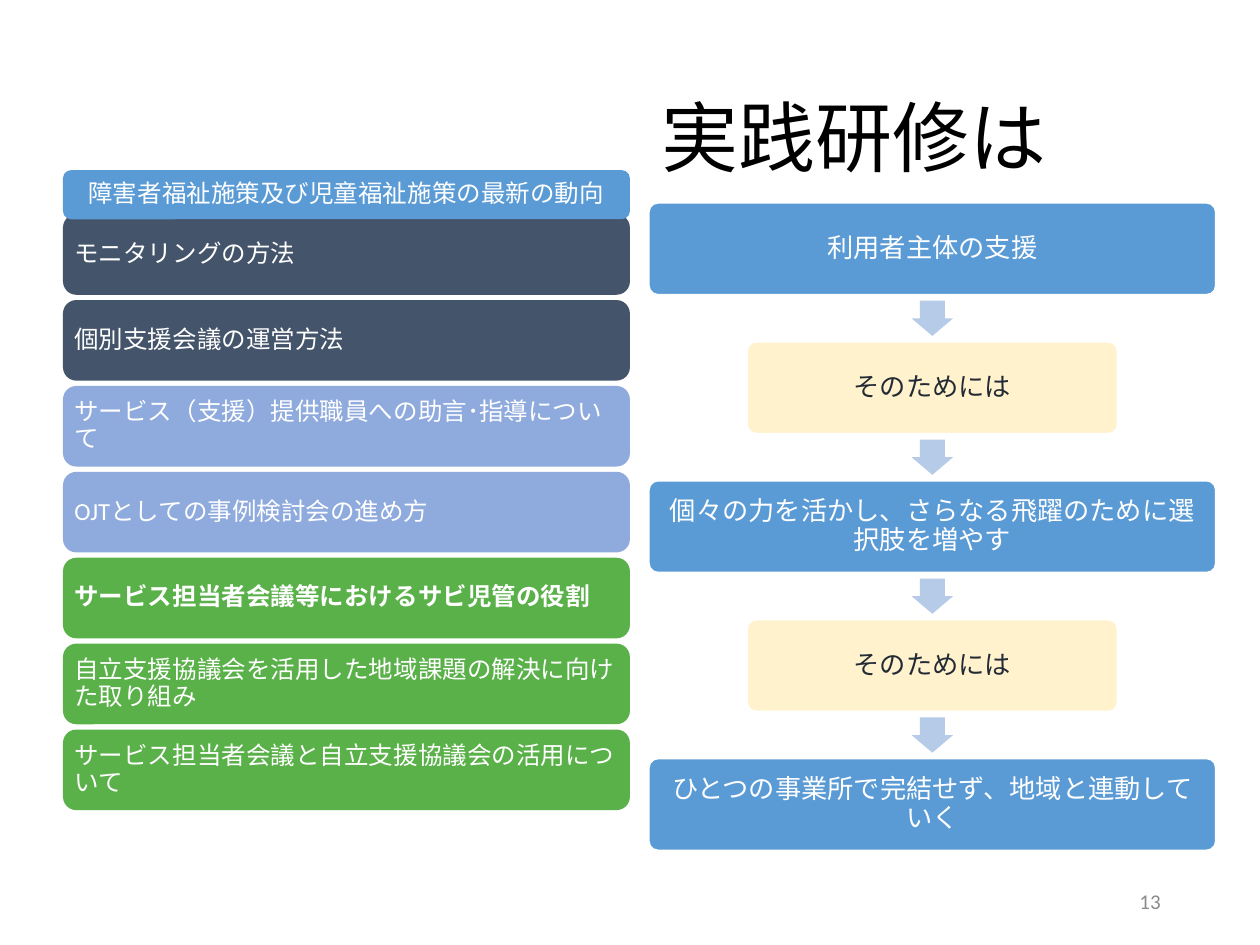
from pptx import Presentation
from pptx.dml.color import RGBColor
from pptx.enum.shapes import MSO_SHAPE
from pptx.enum.text import MSO_ANCHOR, PP_ALIGN
from pptx.util import Inches, Pt

ROUND = MSO_SHAPE.ROUNDED_RECTANGLE
DOWN = MSO_SHAPE.DOWN_ARROW
MIDDLE = MSO_ANCHOR.MIDDLE
LEFT, CENTER, RIGHT = PP_ALIGN.LEFT, PP_ALIGN.CENTER, PP_ALIGN.RIGHT

FONT = "Calibri"
WHITE, BLUE, NAVY = "FFFFFF", "5B9BD5", "44546A"
PERIWINKLE, GREEN = "8FAADC", "5AB149"
CREAM, INK, PALE_BLUE = "FFF2CC", "222A35", "B5CBE7"

TOPICS = [
    ("モニタリングの方法", NAVY, False),
    ("個別支援会議の運営方法", NAVY, False),
    ("サービス（支援）提供職員への助言･指導について", PERIWINKLE, False),
    ("OJTとしての事例検討会の進め方", PERIWINKLE, False),
    ("サービス担当者会議等におけるサビ児管の役割", GREEN, True),
    ("自立支援協議会を活用した地域課題の解決に向けた取り組み", GREEN, False),
    ("サービス担当者会議と自立支援協議会の活用について", GREEN, False),
]
GOAL = (4.5, BLUE, WHITE)
BRIDGE = (2.94, CREAM, INK)
STEPS = [
    ("利用者主体の支援", GOAL),
    ("そのためには", BRIDGE),
    ("個々の力を活かし、さらなる飛躍のために選択肢を増やす", GOAL),
    ("そのためには", BRIDGE),
    ("ひとつの事業所で完結せず、地域と連動していく", GOAL),
]


def rgb(value):
    return RGBColor.from_string(value)


def write(sp, text, size, color, align=LEFT, spacing=0.9, bold=False):
    tf = sp.text_frame
    tf.word_wrap = True
    tf.vertical_anchor = MIDDLE
    p = tf.paragraphs[0]
    p.alignment = align
    p.line_spacing = spacing
    r = p.add_run()
    r.text = text
    r.font.size = Pt(size)
    r.font.name = FONT
    r.font.bold = bold
    r.font.color.rgb = rgb(color)


def add_label(s, box, text, size, color, **style):
    sp = s.shapes.add_textbox(*map(Inches, box))
    write(sp, text, size, color, **style)


def add_block(s, kind, box, fill, line=None, adjust=()):
    sp = s.shapes.add_shape(kind, *map(Inches, box))
    sp.shadow.inherit = False
    sp.fill.solid()
    sp.fill.fore_color.rgb = rgb(fill)
    if line:
        sp.line.color.rgb = rgb(line)
        sp.line.width = Pt(1)
    else:
        sp.line.fill.background()
    for i, value in enumerate(adjust):
        sp.adjustments[i] = value
    return sp


def add_card(s, box, fill, text, size, color, line=None, adjust=(), **style):
    sp = add_block(s, ROUND, box, fill, line, adjust)
    tf = sp.text_frame
    tf.margin_left = tf.margin_right = Inches(0.06)
    tf.margin_top = tf.margin_bottom = Inches(0.06)
    write(sp, text, size, color, **style)


def add_topics(s):
    top, pitch = 1.7, 4.09 / 6
    for i, (text, fill, bold) in enumerate(TOPICS):
        add_card(s, (0.5, top + i * pitch, 4.5, 0.64), fill, text, 14, WHITE,
                 bold=bold)
    # Banner overlaps the first topic
    add_card(s, (0.5, 1.35, 4.5, 0.39), BLUE,
             "障害者福祉施策及び児童福祉施策の最新の動向", 14, WHITE, align=CENTER)


def add_flow(s):
    center, top, height, pitch = 7.4, 1.61, 0.73, 4.41 / 4
    arrow_w, arrow_h = 0.33, 0.28
    gap = (pitch - height - arrow_h) / 2
    for i, (text, (width, fill, color)) in enumerate(STEPS):
        y = top + i * pitch
        add_card(s, (center - width / 2, y, width, height), fill, text, 15,
                 color, line=WHITE, adjust=(0.1,), align=CENTER)
        if i < len(STEPS) - 1:
            add_block(s, DOWN, (center - arrow_w / 2, y + height + gap,
                                arrow_w, arrow_h),
                      PALE_BLUE, adjust=(0.6, 0.5))


def main():
    prs = Presentation()
    prs.slide_width, prs.slide_height = Inches(10), Inches(7.5)
    s = prs.slides.add_slide(prs.slide_layouts[6])

    # Title
    add_label(s, (5.15, 0.4, 4.16, 1.45), "実践研修は", 44, "000000")
    # Right: flow of steps
    add_flow(s)
    # Page number
    add_label(s, (7.06, 6.95, 2.25, 0.4), "13", 12, "8C8C8C",
              align=RIGHT, spacing=1.0)
    # Left: training topics
    add_topics(s)

    prs.save("out.pptx")


if __name__ == "__main__":
    main()
